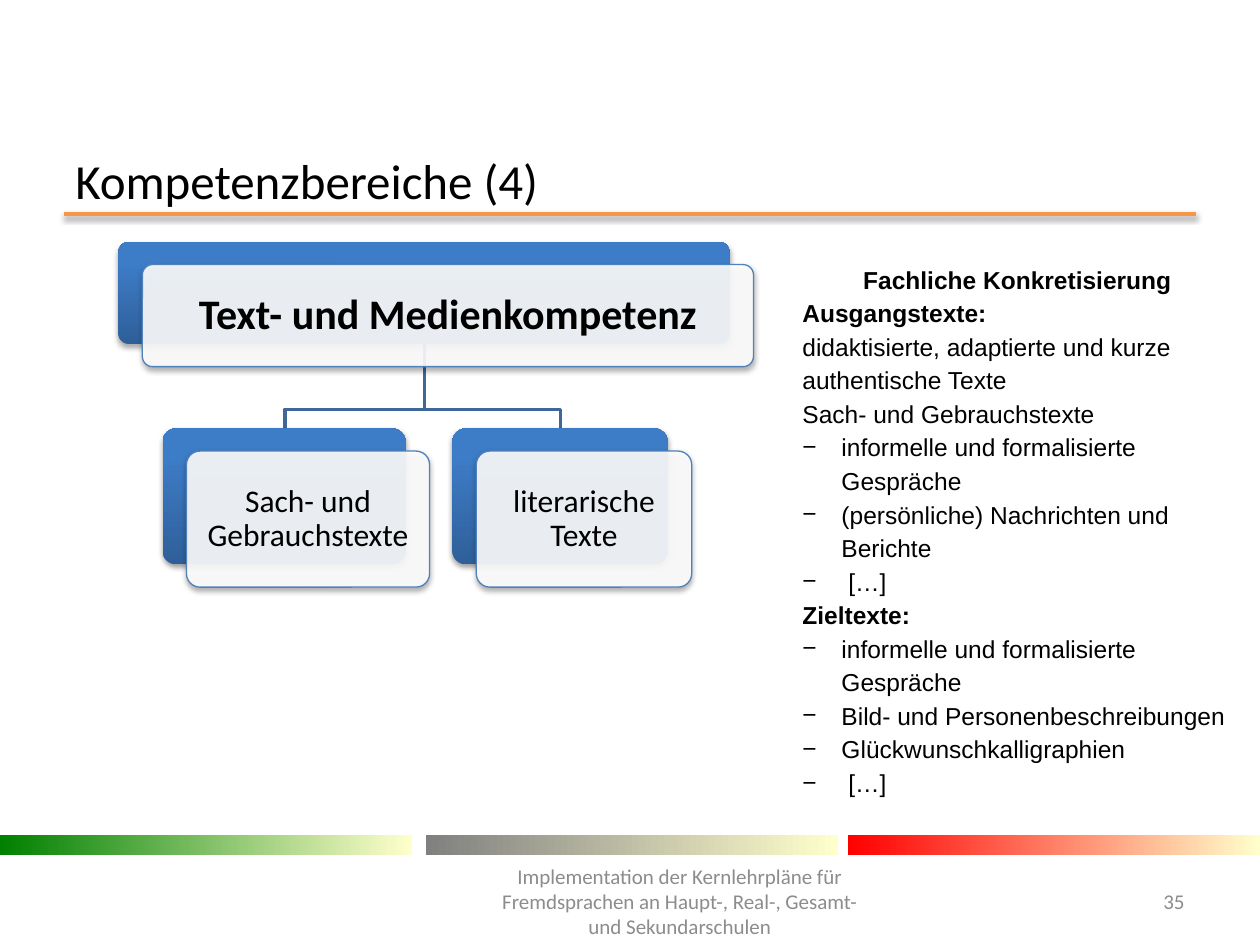
from lxml import etree
from pptx import Presentation
from pptx.dml.color import RGBColor
from pptx.enum.shapes import MSO_CONNECTOR, MSO_SHAPE
from pptx.enum.text import MSO_ANCHOR, PP_ALIGN
from pptx.oxml import parse_xml
from pptx.oxml.ns import nsdecls, qn
from pptx.util import Inches, Pt

LEFT, CENTER, RIGHT = PP_ALIGN.LEFT, PP_ALIGN.CENTER, PP_ALIGN.RIGHT
MIDDLE = MSO_ANCHOR.MIDDLE
RECT, ROUNDED = MSO_SHAPE.RECTANGLE, MSO_SHAPE.ROUNDED_RECTANGLE
STRAIGHT = MSO_CONNECTOR.STRAIGHT

BLACK = RGBColor(0x00, 0x00, 0x00)
WHITE = RGBColor(0xFF, 0xFF, 0xFF)
GRAY = RGBColor(0x8C, 0x8C, 0x8C)
ORANGE = RGBColor(0xF7, 0x96, 0x46)
CREAM = RGBColor(0xFF, 0xFF, 0xCC)
BAR_GREEN = RGBColor(0x00, 0x80, 0x00)
BAR_GRAY = RGBColor(0x80, 0x80, 0x80)
BAR_RED = RGBColor(0xFF, 0x00, 0x00)
BRANCH_BLUE = RGBColor(0x3F, 0x67, 0x97)
DARK_BLUE = RGBColor(0x2F, 0x5F, 0x99)
MID_BLUE = RGBColor(0x3D, 0x7C, 0xC7)
EDGE_BLUE = RGBColor(0x4F, 0x81, 0xBD)


def add_shadow(shape, opacity):
    """Soft shadow below a shape whose fill and line are already set."""
    shape._element.spPr.append(parse_xml(
        f'<a:effectLst {nsdecls("a")}><a:outerShdw blurRad="40000" dist="21000" '
        'dir="5400000" rotWithShape="0"><a:srgbClr val="000000">'
        f'<a:alpha val="{opacity * 1000}"/></a:srgbClr></a:outerShdw></a:effectLst>'))


def fill_gradient(shape, start, end, angle, end_position=1):
    shape.fill.gradient()
    shape.fill.gradient_angle = angle
    first, last = shape.fill.gradient_stops
    first.color.rgb, first.position = start, 0
    last.color.rgb, last.position = end, end_position


prs = Presentation()
prs.slide_width, prs.slide_height = Inches(10), Inches(7.5)
slide = prs.slides.add_slide(prs.slide_layouts[6])
shapes = slide.shapes

# Rule under the title
title_rule = shapes.add_connector(STRAIGHT, Inches(0.51), Inches(1.7), Inches(9.49), Inches(1.7))
title_rule.line.color.rgb = ORANGE
title_rule.line.width = Pt(2)
add_shadow(title_rule, 38)

# Colour bars above the footer
for left, color in ((0, BAR_GREEN), (3.38, BAR_GRAY), (6.73, BAR_RED)):
    bar = shapes.add_shape(RECT, Inches(left), Inches(6.63), Inches(3.27), Inches(0.16))
    bar.shadow.inherit = False
    bar.line.fill.background()
    fill_gradient(bar, color, CREAM, 0)

# Title, footer and slide number
for text, left, top, width, height, size, color, align in (
    ("Kompetenzbereiche (4)", 0.5, 1.23, 9, 0.39, 28, BLACK, LEFT),
    ("Implementation der Kernlehrpläne für Fremdsprachen an Haupt-, Real-, "
     "Gesamt- und Sekundarschulen", 3.82, 6.95, 3.15, 0.4, 12, GRAY, CENTER),
    ("35", 8.86, 6.95, 0.64, 0.4, 12, GRAY, RIGHT),
):
    frame = shapes.add_textbox(Inches(left), Inches(top), Inches(width), Inches(height)).text_frame
    frame.word_wrap = True
    frame.vertical_anchor = MIDDLE
    line = frame.paragraphs[0]
    line.text = text
    line.alignment = align
    line.font.name, line.font.size, line.font.color.rgb = "Calibri", Pt(size), color

# Branches of the hierarchy
trunk_x = Inches(3.37)
for branch_x in (Inches(4.45), Inches(2.26)):
    builder = shapes.build_freeform(trunk_x, Inches(2.72))
    builder.add_line_segments([(trunk_x, Inches(3.25)), (branch_x, Inches(3.25)),
                               (branch_x, Inches(3.4))], close=False)
    branch = builder.convert_to_shape()
    branch.shadow.inherit = False
    branch.fill.background()
    branch.line.color.rgb = BRANCH_BLUE
    branch.line.width = Pt(2)

# Hierarchy cards: a blue plate behind a translucent label
for text, left, top, width, height, size, bold, opacity in (
    ("Text- und Medienkompetenz", 0.94, 1.92, 4.85, 0.81, 24, True, 35),
    ("Sach- und Gebrauchstexte", 1.29, 3.4, 1.93, 1.08, 18, False, 38),
    ("literarische Texte", 3.59, 3.4, 1.71, 1.08, 18, False, 38),
):
    plate = shapes.add_shape(ROUNDED, Inches(left), Inches(top), Inches(width), Inches(height))
    plate.adjustments[0] = 0.1
    fill_gradient(plate, DARK_BLUE, MID_BLUE, 90, 0.8)
    plate.line.fill.background()
    add_shadow(plate, opacity)

    label = shapes.add_shape(ROUNDED, Inches(left + 0.19), Inches(top + 0.18),
                             Inches(width), Inches(height))
    label.adjustments[0] = 0.1
    label.fill.solid()
    label.fill.fore_color.rgb = WHITE
    white = label._element.spPr.find(qn("a:solidFill"))[0]
    etree.SubElement(white, qn("a:alpha")).set("val", "90000")
    label.line.color.rgb = EDGE_BLUE
    label.line.width = Pt(0.75)
    add_shadow(label, 35)

    frame = label.text_frame
    frame.word_wrap = True
    frame.vertical_anchor = MIDDLE
    frame.margin_left = frame.margin_right = Inches(0.1)
    line = frame.paragraphs[0]
    line.text = text
    line.alignment = CENTER
    line.line_spacing = 0.9
    line.font.name, line.font.size, line.font.bold = "Calibri", Pt(size), bold
    line.font.color.rgb = BLACK

# Subject details on the right
details = (
    ("heading", "Fachliche Konkretisierung"),
    ("label", "Ausgangstexte:"),
    ("plain", "didaktisierte, adaptierte und kurze authentische Texte"),
    ("plain", "Sach- und Gebrauchstexte"),
    ("item", "informelle und formalisierte Gespräche"),
    ("item", "(persönliche) Nachrichten und Berichte"),
    ("item", " […]"),
    ("label", "Zieltexte:"),
    ("item", "informelle und formalisierte Gespräche"),
    ("item", "Bild- und Personenbeschreibungen"),
    ("item", "Glückwunschkalligraphien"),
    ("item", " […]"),
)
frame = shapes.add_textbox(Inches(6.27), Inches(2.02), Inches(3.61), Inches(4.33)).text_frame
frame.word_wrap = True
for index, (role, text) in enumerate(details):
    line = frame.add_paragraph() if index else frame.paragraphs[0]
    line.text = text
    line.alignment = CENTER if role == "heading" else LEFT
    line.line_spacing = 1.14
    if role == "item":
        properties = line._p.get_or_add_pPr()
        properties.set("marL", str(Inches(0.31)))
        properties.set("indent", str(-Inches(0.31)))
        etree.SubElement(properties, qn("a:buFont")).set("typeface", "Arial")
        etree.SubElement(properties, qn("a:buChar")).set("char", "−")
    line.font.name, line.font.size = "Arial", Pt(14)
    line.font.bold = role in ("heading", "label")
    line.font.color.rgb = BLACK

prs.save("out.pptx")
